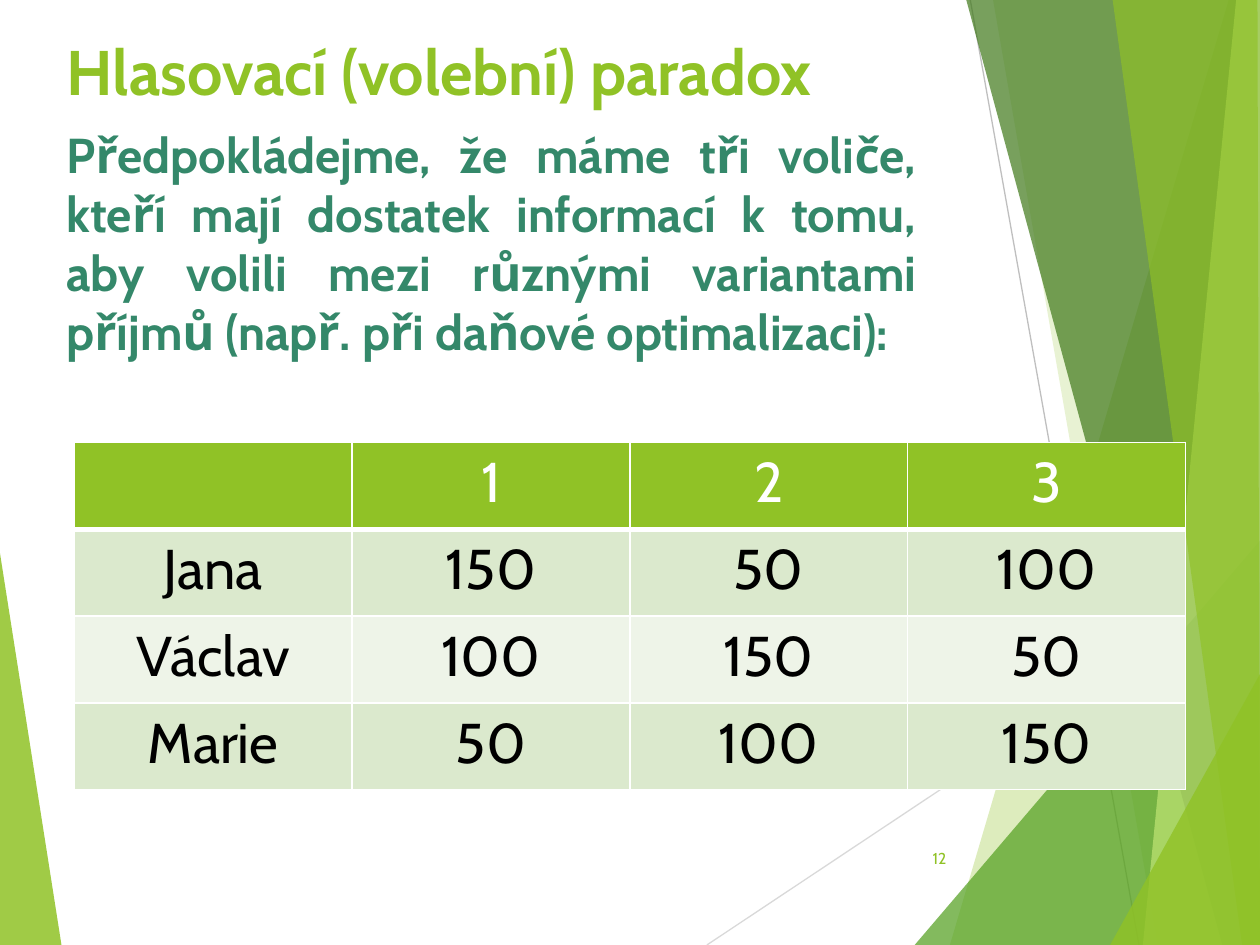
from dataclasses import dataclass

from pptx import Presentation
from pptx.dml.color import RGBColor
from pptx.enum.shapes import MSO_CONNECTOR
from pptx.enum.text import MSO_ANCHOR, MSO_AUTO_SIZE, PP_ALIGN
from pptx.oxml.ns import qn
from pptx.util import Cm, Pt
from lxml import etree

STRAIGHT = MSO_CONNECTOR.STRAIGHT
TOP, MIDDLE = MSO_ANCHOR.TOP, MSO_ANCHOR.MIDDLE
NO_FIT = MSO_AUTO_SIZE.NONE
LEFT, CENTER, RIGHT, JUSTIFY = PP_ALIGN.LEFT, PP_ALIGN.CENTER, PP_ALIGN.RIGHT, PP_ALIGN.JUSTIFY
TITLE_ONLY = 5


@dataclass(frozen=True)
class Theme:
    """Colours, font and type sizes of the deck."""
    font: str = "Cabin"
    lime: str = "90C226"
    leaf: str = "54A021"
    forest: str = "3F7819"
    pale: str = "C0E474"
    teal: str = "34886A"
    white: str = "FFFFFF"
    black: str = "000000"
    bands: tuple = ("DBE9CD", "EEF4E8")
    light_line: str = "D9D9D9"
    dark_line: str = "BFBFBF"
    title_size: int = 36
    body_size: int = 28
    table_size: int = 32
    number_size: int = 9


@dataclass(frozen=True)
class Box:
    """A region in centimetres."""
    left: float
    top: float
    width: float
    height: float

    def frame(self):
        """Return the four lengths of the region."""
        return Cm(self.left), Cm(self.top), Cm(self.width), Cm(self.height)

    def point(self, x, y):
        """Return a point given relative to the region."""
        return Cm(self.left + x), Cm(self.top + y)


THEME = Theme()
PAGE = Box(0, 0, 25.4, 19.05)


def write(frame, text, size, color, align, bold=False):
    """Write one formatted run into the first paragraph of a frame."""
    para = frame.paragraphs[0]
    para.alignment = align
    span = para.add_run()
    span.text = text
    span.font.name = THEME.font
    span.font.size = Pt(size)
    span.font.bold = bold
    span.font.color.rgb = RGBColor.from_string(color)
    return para


def add_ribbon(page, box, points, color, opacity):
    """Draw a translucent polygon, with opacity in percent."""
    start, *others = [box.point(x, y) for x, y in points]
    builder = page.shapes.build_freeform(*start)
    builder.add_line_segments(others, close=True)
    shape = builder.convert_to_shape()
    shape.shadow.inherit = False
    shape.line.fill.background()
    shape.fill.solid()
    shape.fill.fore_color.rgb = RGBColor.from_string(color)
    tint = shape.element.find(".//" + qn("a:srgbClr"))
    etree.SubElement(tint, qn("a:alpha"), val=str(opacity * 1000))


def add_thin_line(page, box, start, end, color):
    """Draw a thin straight line."""
    line = page.shapes.add_connector(STRAIGHT, *box.point(*start), *box.point(*end))
    line.line.color.rgb = RGBColor.from_string(color)
    line.line.width = Pt(0.75)
    etree.SubElement(line.element.spPr, qn("a:effectLst"))


def add_background(page, box):
    """Draw the ribbons and lines along the edges of the region."""
    right, bottom = box.width, box.height
    corner, upper = (right, bottom), (right, 0)
    add_ribbon(page, box, [(0, 11.15), (1.24, bottom), (0, bottom)], THEME.lime, 85)
    add_thin_line(page, box, (14.25, bottom), (right, 11.63), THEME.light_line)
    add_thin_line(page, box, (19.56, 0), (22.96, bottom), THEME.dark_line)
    ribbons = [
        ((24.77, 0), 19.15, upper, THEME.lime, 30),
        ((20.02, 0), 23.34, upper, THEME.lime, 20),
        ((right, 10.9), 18.44, None, THEME.leaf, 72),
        ((19.48, 0), 24.64, upper, THEME.forest, 70),
        ((24.92, 0), 23.04, upper, THEME.pale, 70),
        ((22.43, 0), 25.04, (25.35, 0), THEME.lime, 65),
        ((right, 13.59), 22.38, None, THEME.lime, 80),
    ]
    for tip, foot, last, color, opacity in ribbons:
        points = [tip, (foot, bottom), corner] + ([last] if last else [])
        add_ribbon(page, box, points, color, opacity)


def add_title(page, box, text):
    """Place and format the title above the background."""
    title = page.shapes.title
    page.shapes.element.append(title.element)
    title.left, title.top, title.width, title.height = box.frame()
    frame = title.text_frame
    frame.auto_size = NO_FIT
    frame.vertical_anchor = TOP
    write(frame, text, THEME.title_size, THEME.lime, LEFT, bold=True)


def add_text(page, box, text, size, color, align, anchor=TOP, bold=False):
    """Place a wrapped text box and return its paragraph."""
    frame = page.shapes.add_textbox(*box.frame()).text_frame
    frame.word_wrap = True
    frame.vertical_anchor = anchor
    return write(frame, text, size, color, align, bold)


def set_borders(cell, bottom):
    """Give a cell white borders with the given bottom width in points."""
    properties = cell._tc.get_or_add_tcPr()
    for side, width in (("L", 1), ("R", 1), ("T", 1), ("B", bottom)):
        border = etree.SubElement(properties, qn("a:ln" + side), w=str(Pt(width)))
        fill = etree.SubElement(border, qn("a:solidFill"))
        etree.SubElement(fill, qn("a:srgbClr"), val=THEME.white)


def add_vote_table(page, box, rows):
    """Fill the region with an evenly spaced banded table."""
    table = page.shapes.add_table(len(rows), len(rows[0]), *box.frame()).table
    for column in table.columns:
        column.width = Cm(box.width / len(rows[0]))
    for index, values in enumerate(rows):
        header = index == 0
        table.rows[index].height = Cm(box.height / len(rows))
        fill = THEME.lime if header else THEME.bands[(index - 1) % 2]
        color = THEME.white if header else THEME.black
        for cell, value in zip(table.rows[index].cells, values):
            set_borders(cell, 3 if header else 1)
            cell.fill.solid()
            cell.fill.fore_color.rgb = RGBColor.from_string(fill)
            if value:
                write(cell.text_frame, value, THEME.table_size, color, CENTER)


def main():
    """Build the slide and save the deck."""
    deck = Presentation()
    deck.slide_width, deck.slide_height = Cm(PAGE.width), Cm(PAGE.height)
    page = deck.slides.add_slide(deck.slide_layouts[TITLE_ONLY])
    add_background(page, PAGE)
    add_title(page, Box(1.09, 0.53, 22.86, 3.18), "Hlasovací (volební) paradox")
    body = add_text(
        page, Box(1.09, 2.39, 17.63, 10.77),
        "Předpokládejme, že máme tři voliče, kteří mají dostatek informací k tomu, "
        "aby volili mezi různými variantami příjmů (např. při daňové optimalizaci):",
        THEME.body_size, THEME.teal, JUSTIFY, bold=True)
    body.space_before = Pt(10)
    add_text(page, Box(17.91, 16.79, 1.42, 1.02), "12",
             THEME.number_size, THEME.lime, RIGHT, MIDDLE)
    add_vote_table(page, Box(1.5, 8.92, 22.4, 7), [
        ("", "1", "2", "3"),
        ("Jana", "150", "50", "100"),
        ("Václav", "100", "150", "50"),
        ("Marie", "50", "100", "150"),
    ])
    deck.save("out.pptx")


if __name__ == "__main__":
    main()
